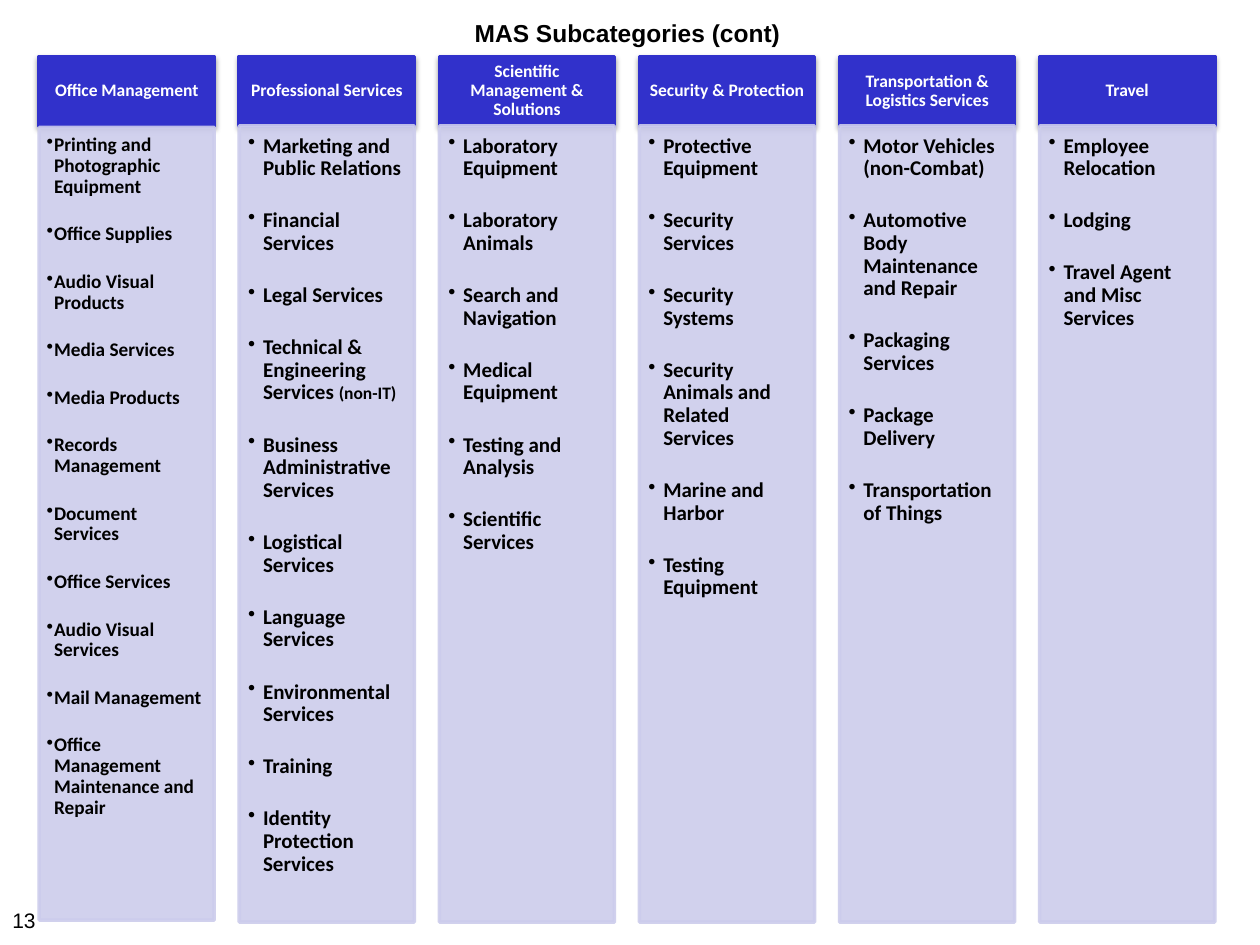
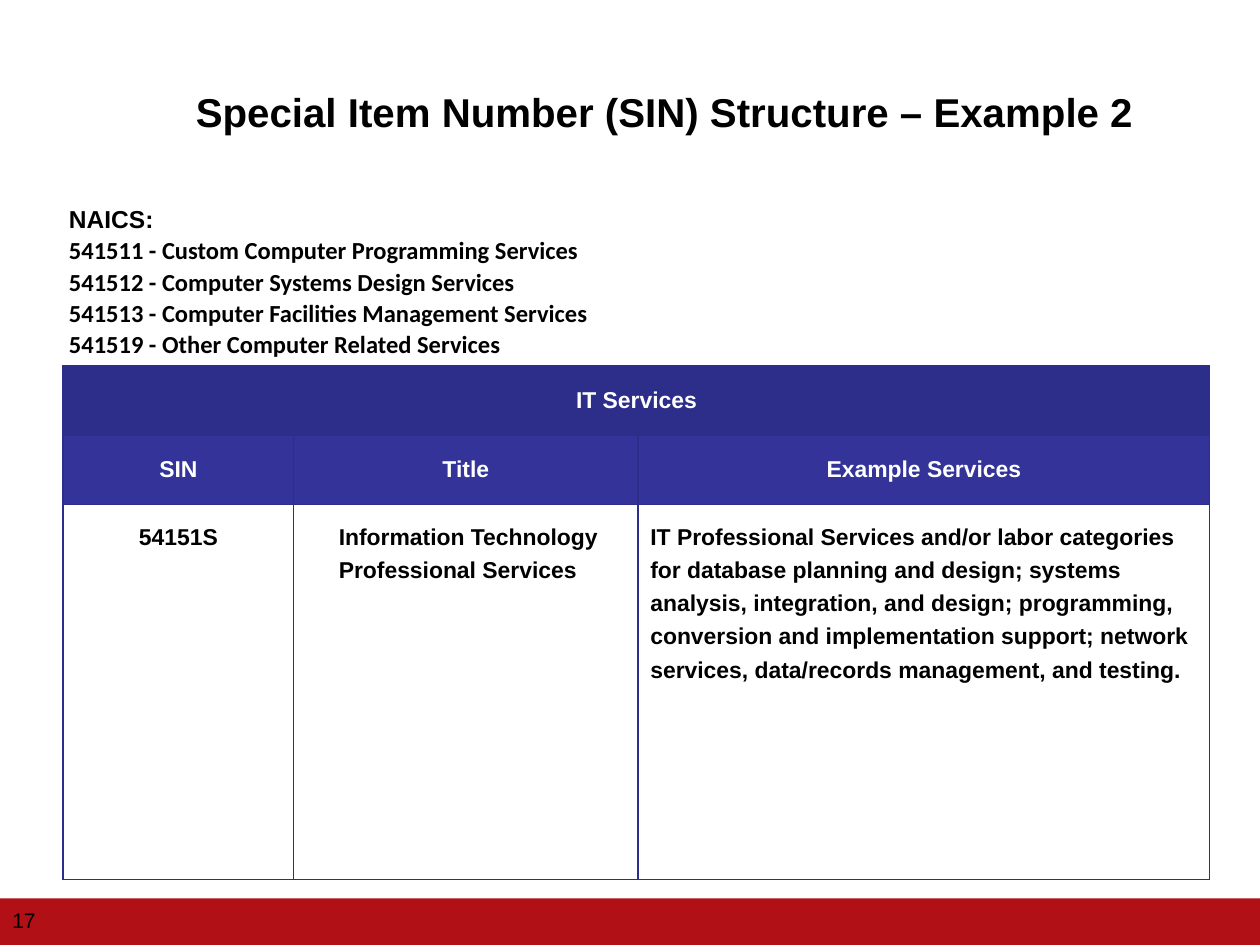
from lxml.etree import SubElement
from pptx import Presentation
from pptx.dml.color import RGBColor
from pptx.enum.shapes import MSO_SHAPE as SHAPE
from pptx.enum.text import MSO_ANCHOR as ANCHOR, MSO_AUTO_SIZE as AUTO_SIZE, PP_ALIGN as ALIGN
from pptx.oxml.ns import qn
from pptx.util import Cm, Pt

BLACK = RGBColor(0x00, 0x00, 0x00)
WHITE = RGBColor(0xFF, 0xFF, 0xFF)
HEADER_BLUE = RGBColor(0x31, 0x31, 0xCB)
LIST_LILAC = RGBColor(0xCC, 0xCC, 0xEC)
TABLE_NAVY = RGBColor(0x2D, 0x2D, 0x8A)
TABLE_BLUE = RGBColor(0x33, 0x33, 0x99)
BAND_RED = RGBColor(0xB1, 0x11, 0x16)

COLUMNS_LEFT, COLUMNS_RIGHT, COLUMN_WIDTH = 0.79, 24.49, 3.53
HEADER_TOP, HEADER_HEIGHT = 1.14, 1.4

CATEGORIES = [
    ("Office Management", [
        "Printing and Photographic Equipment", "Office Supplies", "Audio Visual Products",
        "Media Services", "Media Products", "Records Management", "Document Services",
        "Office Services", "Audio Visual Services", "Mail Management",
        "Office Management Maintenance and Repair"]),
    ("Professional Services", [
        "Marketing and Public Relations", "Financial Services", "Legal Services",
        "Technical & Engineering Services |(non-IT)", "Business Administrative Services",
        "Logistical Services", "Language Services", "Environmental Services", "Training",
        "Identity Protection Services"]),
    ("Scientific Management & Solutions", [
        "Laboratory Equipment", "Laboratory Animals", "Search and Navigation",
        "Medical Equipment", "Testing and Analysis", "Scientific Services"]),
    ("Security & Protection", [
        "Protective Equipment", "Security Services", "Security Systems",
        "Security Animals and Related Services", "Marine and Harbor", "Testing Equipment"]),
    ("Transportation & Logistics Services", [
        "Motor Vehicles (non-Combat)", "Automotive Body Maintenance and Repair",
        "Packaging Services", "Package Delivery", "Transportation of Things"]),
    ("Travel", ["Employee Relocation", "Lodging", "Travel Agent and Misc Services"]),
]

NAICS = [
    "NAICS:",
    "541511 - Custom Computer Programming Services",
    "541512 - Computer Systems Design Services",
    "541513 - Computer Facilities Management Services",
    "541519 - Other Computer Related Services",
]

SIN_HEADINGS = ["SIN", "Title", "Example Services"]
SIN_ROW = [
    "54151S",
    "Information Technology Professional Services",
    "IT Professional Services and/or labor categories for database planning and design; "
    "systems analysis, integration, and design; programming, conversion and implementation "
    "support; network services, data/records management, and testing.",
]


def format_runs(p, size, font="Arial", color=BLACK, bold=True):
    for r in p.runs:
        r.font.name = font
        r.font.size = Pt(size)
        r.font.bold = bold
        r.font.color.rgb = color


def set_frame(tf, left, top, right, bottom, anchor=ANCHOR.TOP):
    tf.word_wrap = True
    tf.auto_size = AUTO_SIZE.NONE
    tf.vertical_anchor = anchor
    tf.margin_left, tf.margin_top = Cm(left), Cm(top)
    tf.margin_right, tf.margin_bottom = Cm(right), Cm(bottom)


def set_title(s, text, box, size, line_spacing=1.0):
    sp = s.shapes.title
    sp.left, sp.top, sp.width, sp.height = map(Cm, box)
    tf = sp.text_frame
    set_frame(tf, 0.25, 0.13, 0.25, 0.13, ANCHOR.MIDDLE)
    tf.text = text
    p = tf.paragraphs[0]
    p.alignment = ALIGN.CENTER
    p.line_spacing = line_spacing
    format_runs(p, size)


def add_page_number(s, number):
    tf = s.shapes.add_textbox(Cm(0), Cm(18.03), Cm(5.92), Cm(1.02)).text_frame
    set_frame(tf, 0.25, 0.13, 0.25, 0.13, ANCHOR.MIDDLE)
    tf.text = str(number)
    format_runs(tf.paragraphs[0], 12, bold=False)


def add_block(s, box, color, line_width=2):
    sp = s.shapes.add_shape(SHAPE.RECTANGLE, *map(Cm, box))
    sp.shadow.inherit = False
    sp.fill.solid()
    sp.fill.fore_color.rgb = color
    if line_width:
        sp.line.color.rgb = color
        sp.line.width = Pt(line_width)
    else:
        sp.line.fill.background()
    return sp


def add_alpha(color_element, percent):
    SubElement(color_element, qn("a:alpha"), val=str(percent * 1000))


def add_drop_shadow(sp):
    effects = sp._element.spPr.find(qn("a:effectLst"))
    shadow = SubElement(effects, qn("a:outerShdw"), blurRad=str(Pt(3.1)),
                        dist=str(Pt(1.6)), dir="5400000", rotWithShape="0")
    add_alpha(SubElement(shadow, qn("a:srgbClr"), val=str(BLACK)), 38)


def set_indent(p, margin, first_line):
    pPr = p._p.get_or_add_pPr()
    pPr.set("marL", str(Cm(margin)))
    pPr.set("indent", str(Cm(first_line)))
    return pPr


def add_bullet(p, margin, hanging):
    pPr = set_indent(p, margin, -hanging)
    SubElement(SubElement(pPr, qn("a:buClr")), qn("a:srgbClr"), val=str(BLACK))
    SubElement(pPr, qn("a:buChar"), char="•")


def add_category_header(s, left, text):
    sp = add_block(s, (left, HEADER_TOP, COLUMN_WIDTH, HEADER_HEIGHT), HEADER_BLUE)
    add_drop_shadow(sp)
    tf = sp.text_frame
    set_frame(tf, 0.2, 0.1, 0.2, 0.1, ANCHOR.MIDDLE)
    tf.text = text
    p = tf.paragraphs[0]
    p.alignment = ALIGN.CENTER
    p.line_spacing = 0.9
    format_runs(p, 10, "Calibri", WHITE)


def add_category_list(s, left, items, top=2.54, height=16.05, size=12,
                      inset=0.18, margin=0.3, hanging=0.3, gap=16.8):
    sp = add_block(s, (left, top, COLUMN_WIDTH, height), LIST_LILAC)
    for color in sp._element.spPr.iter(qn("a:srgbClr")):
        add_alpha(color, 90)
    tf = sp.text_frame
    set_frame(tf, inset, inset, 0.23, 0.25)
    for i, item in enumerate(items):
        p = tf.add_paragraph() if i else tf.paragraphs[0]
        text, _, note = item.partition("|")
        p.text = text
        p.alignment = ALIGN.LEFT
        p.line_spacing = 0.9
        p.space_before = Pt(gap if i else 0)
        add_bullet(p, margin, hanging)
        if note:
            p.add_run().text = note
        format_runs(p, size, "Calibri")
        if note:
            p.runs[-1].font.size = Pt(10)


def add_naics(s):
    tf = s.shapes.add_textbox(Cm(1.14), Cm(3.68), Cm(23.14), Cm(3.4)).text_frame
    set_frame(tf, 0.25, 0.13, 0.25, 0.13)
    tf.text = "\n".join(NAICS)
    for i, p in enumerate(tf.paragraphs):
        p.line_spacing = 1.07 if i else 1.5
        format_runs(p, 14, "Calibri" if i else "Arial")


def add_borders(cell):
    tcPr = cell._tc.get_or_add_tcPr()
    for side in ("a:lnL", "a:lnR", "a:lnT", "a:lnB"):
        ln = SubElement(tcPr, qn(side), w=str(Pt(0.75)))
        SubElement(SubElement(ln, qn("a:solidFill")), qn("a:srgbClr"), val=str(TABLE_NAVY))


def format_cell(cell, fill=None):
    add_borders(cell)
    cell.margin_left = cell.margin_right = Cm(0.25)
    cell.margin_top = cell.margin_bottom = Cm(0.25)
    p = cell.text_frame.paragraphs[0]
    if fill:
        cell.fill.solid()
        cell.fill.fore_color.rgb = fill
        cell.vertical_anchor = ANCHOR.MIDDLE
        p.alignment = ALIGN.CENTER
    else:
        cell.fill.background()
        p.line_spacing = 1.3
    format_runs(p, 13.1, color=WHITE if fill else BLACK)


def add_sin_table(s):
    table = s.shapes.add_table(3, 3, Cm(1.27), Cm(7.37), Cm(23.12), Cm(10.37)).table
    table.first_row = table.horz_banding = False
    for column, width in zip(table.columns, (4.65, 6.94, 11.53)):
        column.width = Cm(width)
    for row, height in zip(table.rows, (1.4, 1.4, 7.57)):
        row.height = Cm(height)
    rows = [["IT Services", "", ""], SIN_HEADINGS, SIN_ROW]
    fills = [TABLE_NAVY, TABLE_BLUE, None]
    for i, (texts, fill) in enumerate(zip(rows, fills)):
        for j, text in enumerate(texts):
            cell = table.cell(i, j)
            cell.text = text
            format_cell(cell, fill)
    table.cell(0, 0).merge(table.cell(0, 2))
    table.cell(2, 0).text_frame.paragraphs[0].alignment = ALIGN.CENTER
    set_indent(table.cell(2, 1).text_frame.paragraphs[0], 0.66, 0)


def build_subcategories(prs):
    s = prs.slides.add_slide(prs.slide_layouts[5])
    add_page_number(s, 13)
    pitch = (COLUMNS_RIGHT - COLUMNS_LEFT - COLUMN_WIDTH) / (len(CATEGORIES) - 1)
    compact = dict(top=2.57, height=15.98, size=11, inset=0.15,
                   margin=0.15, hanging=0.2, gap=15.3)
    for i, (name, items) in enumerate(CATEGORIES):
        left = COLUMNS_LEFT + i * pitch
        add_category_header(s, left, name)
        add_category_list(s, left, items, **({} if i else compact))
    set_title(s, "MAS Subcategories (cont)", (0.79, 0.23, 23.72, 0.86), 14)


def build_sin_example(prs):
    s = prs.slides.add_slide(prs.slide_layouts[5])
    add_block(s, (0, 18.11, 25.4, 0.94), BAND_RED, line_width=0)
    add_naics(s)
    add_page_number(s, 17)
    add_sin_table(s)
    set_title(s, "Special Item Number (SIN) Structure – Example 2",
              (1.98, 1.73, 22.86, 1.17), 23, 0.9)


def main():
    prs = Presentation()
    prs.slide_width, prs.slide_height = Cm(25.4), Cm(19.05)
    build_subcategories(prs)
    build_sin_example(prs)
    prs.save("out.pptx")


if __name__ == "__main__":
    main()
